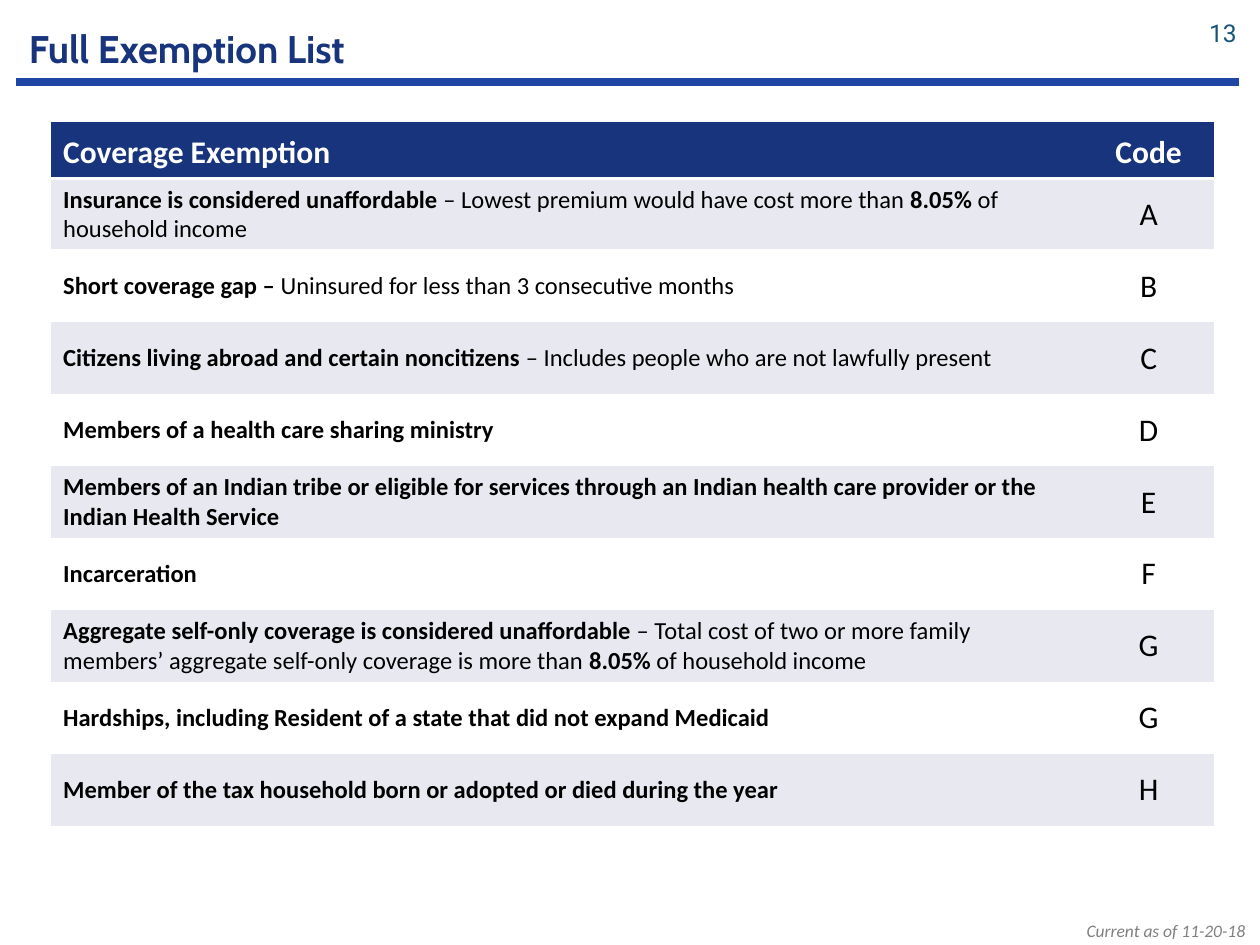
from lxml.etree import SubElement
from pptx import Presentation
from pptx.dml.color import RGBColor
from pptx.enum.shapes import MSO_CONNECTOR
from pptx.enum.text import MSO_ANCHOR as Anchor, PP_ALIGN as Align
from pptx.oxml import parse_xml
from pptx.oxml.ns import nsdecls, qn
from pptx.util import Cm, Pt

# Content: text between asterisks is bold
TITLE = "Full Exemption List"
PAGE_NUMBER = "13"
DATE_NOTE = "Current as of 11-20-18"
HEADINGS = ("*Coverage Exemption*", "*Code*")
EXEMPTIONS = [
    ("*Insurance is considered unaffordable *– Lowest premium would have cost "
     "more than *8.05%* of household income", "A"),
    ("*Short coverage gap – *Uninsured for less than 3 consecutive months", "B"),
    ("*Citizens living abroad and certain noncitizens *– Includes people who "
     "are not lawfully present", "C"),
    ("*Members of a health care sharing ministry*", "D"),
    ("*Members of an Indian tribe or eligible for services through an Indian "
     "health care provider or the Indian Health Service*", "E"),
    ("*Incarceration*", "F"),
    ("*Aggregate self-only coverage is considered unaffordable *– Total cost of "
     "two or more family members’ aggregate self-only coverage is more than "
     "*8.05% *of household income", "G"),
    ("*Hardships, including Resident of a state that did not expand Medicaid*", "G"),
    ("*Member of the tax household born or adopted or died during the year*", "H"),
]

# Layout in centimetres
COLUMN_WIDTHS = (20.82, 2.63)
HEADER_HEIGHT, ROW_HEIGHT = 1.14, 1.45
NAVY, WHITE, BLACK, BAND = "18347C", "FFFFFF", "000000", "E8E9F0"
NO_STYLE = "{2D5ABB26-0587-4C30-8999-92F81FD0307C}"


def color(value):
    return RGBColor.from_string(value)


def style(para, font, size, ink, align=Align.LEFT):
    para.alignment = align
    para.font.name, para.font.size = font, Pt(size)
    para.font.color.rgb = color(ink)


def place(shape, left, top, width, height):
    shape.left, shape.top = Cm(left), Cm(top)
    shape.width, shape.height = Cm(width), Cm(height)


def add_label(page, text, bounds, font, size, ink, anchor):
    box = page.shapes.add_textbox(*map(Cm, bounds))
    box.text_frame.word_wrap = True
    box.text_frame.vertical_anchor = anchor
    para = box.text_frame.paragraphs[0]
    para.text = text
    style(para, font, size, ink, Align.RIGHT)
    return para


def fill_cell(cell, text, size, ink, fill, align, anchor):
    cell.fill.solid()
    cell.fill.fore_color.rgb = color(fill)
    cell.vertical_anchor = anchor
    para = cell.text_frame.paragraphs[0]
    style(para, "Calibri", size, ink, align)
    for index, part in enumerate(text.split("*")):
        if part:
            span = para.add_run()
            span.text = part
            span.font.bold = index % 2 == 1


def add_border(cell, side):
    line = parse_xml(
        f'<a:{side} {nsdecls("a")} w="{Pt(1.5)}"><a:solidFill>'
        f'<a:srgbClr val="{WHITE}"/></a:solidFill></a:{side}>')
    cell._tc.get_or_add_tcPr().insert(0, line)


deck = Presentation()
deck.slide_width, deck.slide_height = Cm(25.4), Cm(19.05)
page = deck.slides.add_slide(deck.slide_layouts[5])

# Title and rule
title = page.shapes.title
place(title, 0.33, 0.25, 22.86, 1.45)
title.text_frame.text = TITLE
title.text_frame.vertical_anchor = Anchor.MIDDLE
style(title.text_frame.paragraphs[0], "Cabin", 22, NAVY)
title.text_frame.paragraphs[0].font.bold = True

rule = page.shapes.add_connector(
    MSO_CONNECTOR.STRAIGHT, Cm(0.33), Cm(1.65), Cm(24.97), Cm(1.65))
rule.line.color.rgb = color("2046A5")
rule.line.width = Pt(4.75)
SubElement(rule._element.spPr, qn("a:effectLst"))

# Page number and date
add_label(page, PAGE_NUMBER, (23.88, 0.15, 1.3, 1.02), "Roboto", 14, "175475",
          Anchor.MIDDLE)
note = add_label(page, DATE_NOTE, (15.16, 18.42, 10.19, 0.69), "Calibri", 10,
                 "808080", Anchor.TOP)
note.font.italic = True

# Exemption table
frame = page.shapes.add_table(
    len(EXEMPTIONS) + 1, len(HEADINGS), Cm(1.02), Cm(2.46),
    Cm(sum(COLUMN_WIDTHS)), Cm(HEADER_HEIGHT + ROW_HEIGHT * len(EXEMPTIONS)))
table = frame.table
table._tbl.tblPr.find(qn("a:tableStyleId")).text = NO_STYLE
for column, width in zip(table.columns, COLUMN_WIDTHS):
    column.width = Cm(width)

for number, texts in enumerate([HEADINGS, *EXEMPTIONS]):
    header = number == 0
    table.rows[number].height = Cm(HEADER_HEIGHT if header else ROW_HEIGHT)
    fill = NAVY if header else BAND if number % 2 else WHITE
    for place_in_row, text in enumerate(texts):
        is_code = place_in_row == 1
        cell = table.cell(number, place_in_row)
        fill_cell(cell, text, 18 if header or is_code else 14,
                  WHITE if header else BLACK, fill,
                  Align.CENTER if is_code else Align.LEFT,
                  Anchor.BOTTOM if header else Anchor.MIDDLE)
        if number < 2:
            add_border(cell, "lnB" if header else "lnT")

deck.save("out.pptx")
